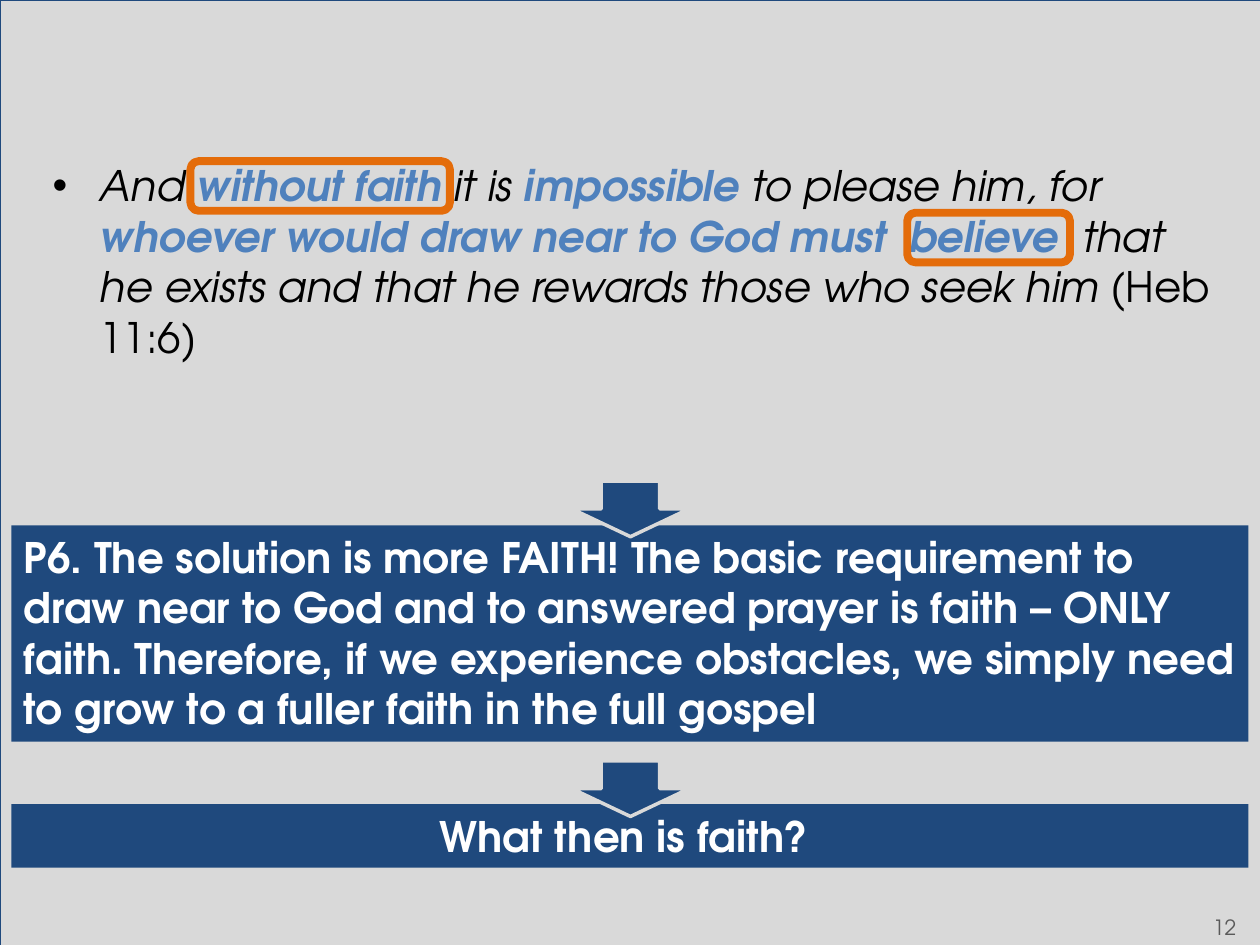
import pptx
import pptx.util
import pptx.dml.color
import pptx.enum.shapes
import pptx.enum.text
import lxml.etree

Cm, Pt = pptx.util.Cm, pptx.util.Pt
kinds = pptx.enum.shapes.MSO_SHAPE
align = pptx.enum.text.PP_ALIGN
anchor = pptx.enum.text.MSO_ANCHOR
NAVY, GREY, BLUE, ORANGE = "1F497D", "D9D9D9", "4F81BD", "E46C0A"


def paint(fmt, hex):
    if hasattr(fmt, "solid"):
        fmt.solid()
        fmt = fmt.fore_color
    fmt.rgb = pptx.dml.color.RGBColor.from_string(hex)


def write(shape, text, size=24, color="000000", bold=False, italic=False, side=align.LEFT, mid=anchor.TOP):
    frame = shape.text_frame
    frame.word_wrap = True
    frame.vertical_anchor = mid
    para = frame.paragraphs[0]
    para.alignment = side
    run = para.add_run()
    run.text = text
    font = run.font
    font.name, font.size, font.bold, font.italic = "TeX Gyre Adventor", Pt(size), bold, italic
    paint(font.color, color)


deck = pptx.Presentation()
deck.slide_width, deck.slide_height = Cm(25.4), Cm(19.05)
slide = deck.slides.add_slide(deck.slide_layouts[6])
paint(slide.background.fill, GREY)
shapes = slide.shapes

verse = shapes.add_textbox(Cm(0.81), Cm(3.1), Cm(24.05), Cm(5.64))
props = verse.text_frame.paragraphs[0]._p.get_or_add_pPr()
props.set("marL", str(Cm(0.95)))
props.set("indent", str(-Cm(0.95)))
ns = "{http://schemas.openxmlformats.org/drawingml/2006/main}"
lxml.etree.SubElement(props, ns + "buFont").set("typeface", "Arial")
lxml.etree.SubElement(props, ns + "buChar").set("char", "•")
for text, strong in [
    ("And ", False),
    ("without faith ", True),
    ("it is ", False),
    ("impossible", True),
    (" to please him, for ", False),
    ("whoever would draw near to God must  believe  ", True),
    ("that he exists and that he rewards those who seek him ", False),
]:
    write(verse, text, color=BLUE if strong else "000000", bold=strong, italic=True)
write(verse, "(Heb 11:6)")

page = shapes.add_textbox(Cm(19.25), Cm(18.19), Cm(5.92), Cm(1.02))
write(page, "12", size=12, color="595959", side=align.RIGHT, mid=anchor.MIDDLE)

claim = ("P6. The solution is more FAITH! The basic requirement to draw near to God "
         "and to answered prayer is faith – ONLY faith. Therefore, if we experience "
         "obstacles, we simply need to grow to a fuller faith in the full gospel")
bar, arrow, ring = kinds.RECTANGLE, kinds.DOWN_ARROW, kinds.ROUNDED_RECTANGLE
for kind, left, top, wide, high, fill, line, thick, text, side in [
    (bar, 0, 0, 25.4, 19.05, None, NAVY, 0.25, None, None),
    (bar, 0.23, 10.59, 24.94, 4.36, NAVY, None, 0, claim, align.LEFT),
    (arrow, 11.53, 9.7, 2.36, 1.12, NAVY, GREY, 2, None, None),
    (ring, 18.29, 4.29, 3.28, 1, None, ORANGE, 4.5, None, None),
    (ring, 3.84, 3.25, 5.23, 1, None, ORANGE, 4.5, None, None),
    (bar, 0.23, 16.21, 24.94, 1.28, NAVY, None, 0, "What then is faith? ", align.CENTER),
    (arrow, 11.53, 15.34, 2.36, 1.12, NAVY, GREY, 2, None, None),
]:
    shape = shapes.add_shape(kind, Cm(left), Cm(top), Cm(wide), Cm(high))
    shape.shadow.inherit = False
    if fill:
        paint(shape.fill, fill)
    else:
        shape.fill.background()
    if line:
        paint(shape.line.fill, line)
        shape.line.width = Pt(thick)
    else:
        shape.line.fill.background()
    if text:
        write(shape, text, color="FFFFFF", bold=True, side=side)

deck.save("out.pptx")
